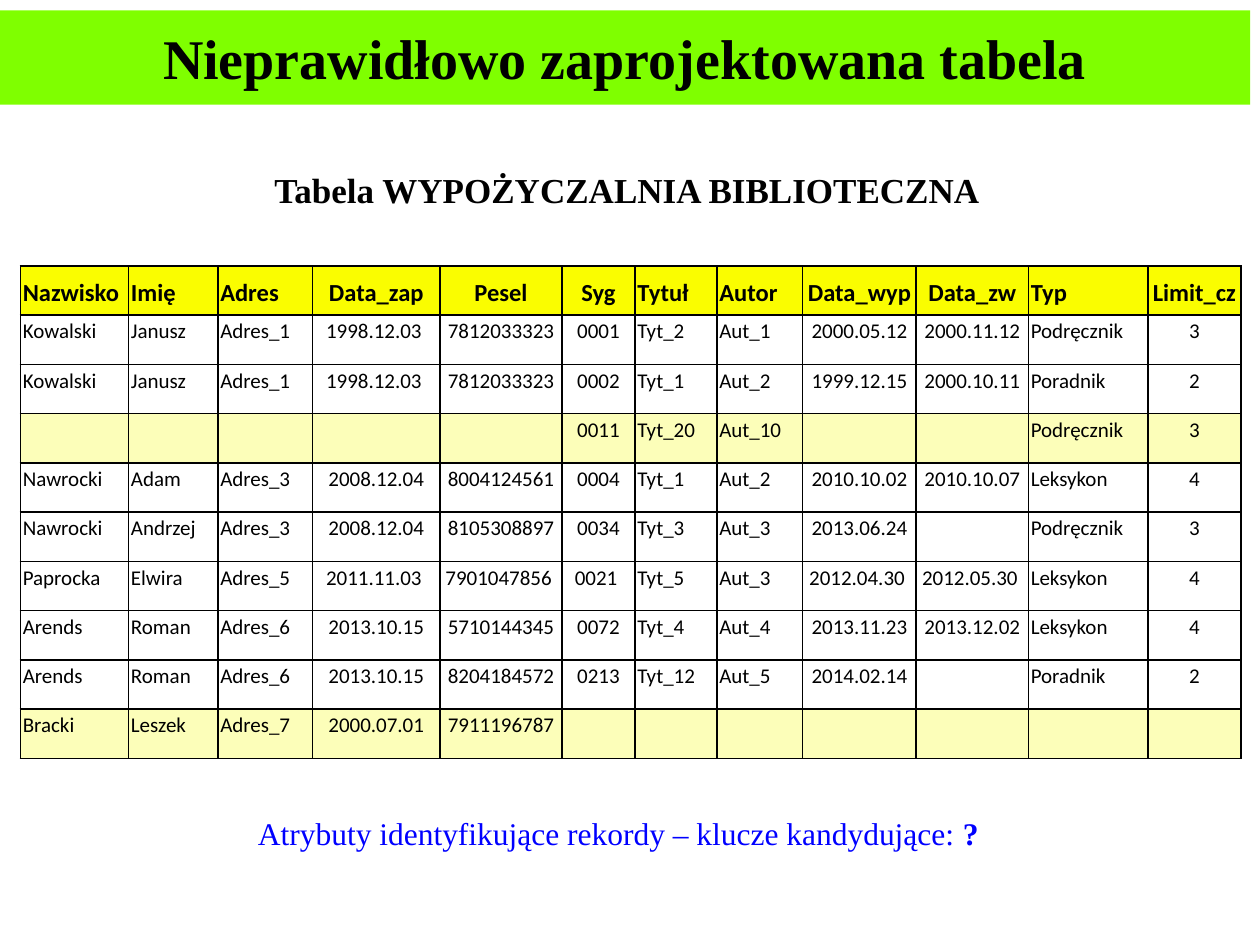
import pptx
import pptx.dml.color
import pptx.enum.text
import pptx.oxml
import pptx.oxml.ns
import pptx.util
from pptx.util import Cm

COLOURS = {
    "banner": "7FFF00",
    "header": "FAFD00",
    "incomplete": "FCFEB9",
    "text": "000000",
    "question": "0000FF",
    "border": "000000",
}
SERIF, SANS = "Times New Roman", "Calibri"
ALIGN = pptx.enum.text.PP_ALIGN
ANCHOR = pptx.enum.text.MSO_ANCHOR

# Heading, width in cm, centred
COLUMNS = [
    ("Nazwisko", 2.18, False), ("Imię", 1.8, False), ("Adres", 1.91, False),
    ("Data_zap", 2.57, True), ("Pesel", 2.46, True), ("Syg", 1.47, True),
    ("Tytuł", 1.65, False), ("Autor", 1.73, False), ("Data_wyp", 2.29, True),
    ("Data_zw", 2.26, True), ("Typ", 2.41, False), ("Limit_cz", 1.88, True),
]
LOANS = [
    "Kowalski|Janusz|Adres_1|1998.12.03 |7812033323|0001|Tyt_2|Aut_1|2000.05.12|2000.11.12|Podręcznik|3",
    "Kowalski|Janusz|Adres_1|1998.12.03 |7812033323|0002|Tyt_1|Aut_2|1999.12.15|2000.10.11|Poradnik|2",
    "|||||0011|Tyt_20|Aut_10|||Podręcznik|3",
    "Nawrocki|Adam|Adres_3|2008.12.04|8004124561|0004|Tyt_1|Aut_2|2010.10.02|2010.10.07|Leksykon|4",
    "Nawrocki|Andrzej|Adres_3|2008.12.04|8105308897|0034|Tyt_3|Aut_3|2013.06.24||Podręcznik|3",
    "Paprocka|Elwira|Adres_5|2011.11.03 |7901047856 |0021 |Tyt_5|Aut_3|2012.04.30 |2012.05.30 |Leksykon|4",
    "Arends|Roman|Adres_6|2013.10.15|5710144345|0072|Tyt_4|Aut_4|2013.11.23|2013.12.02|Leksykon|4",
    "Arends|Roman|Adres_6|2013.10.15|8204184572|0213|Tyt_12|Aut_5|2014.02.14||Poradnik|2",
    "Bracki|Leszek|Adres_7|2000.07.01|7911196787|||||||",
]


def rgb(name):
    return pptx.dml.color.RGBColor.from_string(COLOURS[name])


def style_runs(paragraph, font, size, colour="text", bold=False):
    for run in paragraph.runs:
        run.font.name = font
        run.font.size = pptx.util.Pt(size)
        run.font.bold = bold
        run.font.color.rgb = rgb(colour)


def add_borders(cell):
    properties = cell._tc.get_or_add_tcPr()
    for side in ("lnL", "lnR", "lnT", "lnB"):
        properties.append(pptx.oxml.parse_xml(
            f'<a:{side} {pptx.oxml.ns.nsdecls("a")} w="12700"><a:solidFill>'
            f'<a:srgbClr val="{COLOURS["border"]}"/></a:solidFill></a:{side}>'))


def place_title(slide, left, top, width, height):
    title = slide.shapes.title
    title.left, title.top, title.width, title.height = left, top, width, height
    title.fill.solid()
    title.fill.fore_color.rgb = rgb("banner")
    frame = title.text_frame
    frame.text = "Nieprawidłowo zaprojektowana tabela"
    frame.vertical_anchor = ANCHOR.MIDDLE
    frame.paragraphs[0].alignment = ALIGN.CENTER
    style_runs(frame.paragraphs[0], SERIF, 32, bold=True)


def add_caption(slide, left, top, width, height, wrap=True):
    """Add an empty text box and return its first paragraph."""
    frame = slide.shapes.add_textbox(left, top, width, height).text_frame
    frame.word_wrap = wrap
    frame.auto_size = pptx.enum.text.MSO_AUTO_SIZE.SHAPE_TO_FIT_TEXT
    return frame.paragraphs[0]


def fill_cell(cell, text, centred, is_header, fill):
    cell.margin_left = cell.margin_right = Cm(0.05)
    cell.margin_top = cell.margin_bottom = 0
    cell.vertical_anchor = ANCHOR.MIDDLE if is_header else ANCHOR.TOP
    add_borders(cell)
    if fill:
        cell.fill.solid()
        cell.fill.fore_color.rgb = rgb(fill)
    else:
        cell.fill.background()
    if text:
        cell.text_frame.text = text
        paragraph = cell.text_frame.paragraphs[0]
        paragraph.line_spacing = 1.15
        paragraph.alignment = ALIGN.CENTER if centred else ALIGN.LEFT
        style_runs(paragraph, SANS, 14 if is_header else 12, bold=is_header)


def add_loans_table(slide, left, top, width, height):
    records = [[heading for heading, _, _ in COLUMNS]]
    records += [loan.split("|") for loan in LOANS]
    table = slide.shapes.add_table(
        len(records), len(COLUMNS), left, top, width, height).table
    table.first_row = table.horz_banding = False
    for column, (_, column_width, _) in zip(table.columns, COLUMNS):
        column.width = Cm(column_width)
    for row_index, record in enumerate(records):
        is_header = row_index == 0
        # A record lacking its reader or its book is tinted
        incomplete = not record[0] or not record[5]
        fill = "header" if is_header else "incomplete" if incomplete else None
        for column_index, text in enumerate(record):
            fill_cell(table.cell(row_index, column_index), text,
                      COLUMNS[column_index][2], is_header, fill)


def main():
    presentation = pptx.Presentation()
    presentation.slide_width, presentation.slide_height = Cm(25.4), Cm(19.05)
    slide = presentation.slides.add_slide(presentation.slide_layouts[5])

    place_title(slide, 0, Cm(0.21), Cm(25.2), Cm(1.9))
    subtitle = add_caption(slide, Cm(5.28), Cm(3.28), Cm(14.83), Cm(1.1), wrap=False)
    subtitle.text = "Tabela WYPOŻYCZALNIA BIBLIOTECZNA"
    style_runs(subtitle, SERIF, 20, bold=True)

    add_loans_table(slide, Cm(0.41), Cm(5.36), Cm(24.6), Cm(9.93))

    question = add_caption(slide, Cm(4.95), Cm(16.28), Cm(15.75), Cm(1.02))
    question.text = "Atrybuty identyfikujące rekordy – klucze kandydujące: "
    question.add_run().text = "?"
    style_runs(question, SERIF, 18, "question")
    question.runs[-1].font.bold = True

    presentation.save("out.pptx")


if __name__ == "__main__":
    main()
